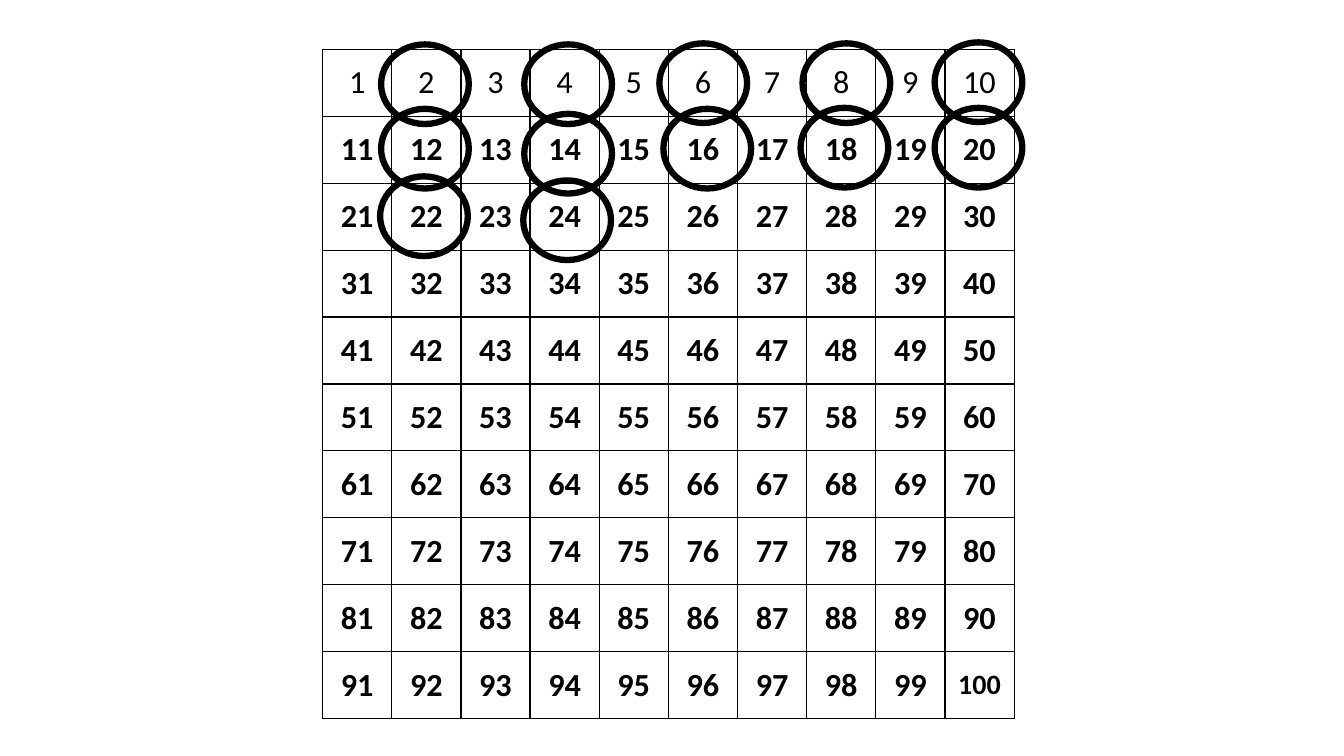
from dataclasses import dataclass

from lxml.etree import SubElement
from pptx import Presentation
from pptx.dml.color import RGBColor
from pptx.enum.shapes import MSO_SHAPE as Preset
from pptx.enum.text import MSO_ANCHOR as Anchor, PP_ALIGN as Align
from pptx.oxml.ns import qn
from pptx.slide import Slide
from pptx.table import _Cell as Cell
from pptx.util import Emu, Pt

EMU_PER_PX = 9144  # 100 px to the inch
BLACK = "000000"
COUNT = 10  # rows and columns of the hundred square
SQUARE_LEFT, SQUARE_TOP, SQUARE_WIDTH, SQUARE_HEIGHT = 320, 49, 686, 664
RING_WIDTH, RING_HEIGHT = 87, 79


@dataclass(frozen=True)
class Ring:
    """A ring around an even number, placed by hand."""
    number: int
    left: int
    top: int


RINGS = [
    Ring(4, 520, 44), Ring(2, 378, 44), Ring(12, 378, 108), Ring(8, 796, 43),
    Ring(20, 927, 107), Ring(16, 658, 108), Ring(6, 654, 43), Ring(18, 794, 107),
    Ring(14, 520, 113), Ring(10, 927, 42), Ring(22, 377, 175), Ring(24, 519, 179),
]


def px(length: int) -> Emu:
    return Emu(length * EMU_PER_PX)


def color(value: str) -> RGBColor:
    return RGBColor.from_string(value)


def add_borders(cell: Cell) -> None:
    properties = cell._tc.get_or_add_tcPr()
    for side in ("a:lnL", "a:lnR", "a:lnT", "a:lnB"):
        border = SubElement(properties, qn(side), w=str(Pt(1)))
        fill = SubElement(border, qn("a:solidFill"))
        SubElement(fill, qn("a:srgbClr"), val=BLACK)


def write_number(cell: Cell, number: int) -> None:
    add_borders(cell)
    cell.fill.background()
    cell.vertical_anchor = Anchor.MIDDLE
    cell.margin_left = cell.margin_right = px(13)
    cell.margin_top = cell.margin_bottom = px(6)
    cell.text_frame.text = str(number)
    paragraph = cell.text_frame.paragraphs[0]
    paragraph.alignment = Align.CENTER
    font = paragraph.runs[0].font
    font.name = "Calibri"
    font.size = Pt(20 if number == 100 else 23)
    font.bold = number > COUNT
    font.color.rgb = color(BLACK)


def add_hundred_square(slide: Slide) -> None:
    square = slide.shapes.add_table(
        COUNT, COUNT, px(SQUARE_LEFT), px(SQUARE_TOP),
        px(SQUARE_WIDTH), px(SQUARE_HEIGHT)).table
    square.first_row = square.horz_banding = False
    for column in square.columns:
        column.width = px(SQUARE_WIDTH) // COUNT
    for row in square.rows:
        row.height = px(SQUARE_HEIGHT) // COUNT
    for number, cell in enumerate(square.iter_cells(), start=1):
        write_number(cell, number)


def add_ring(slide: Slide, ring: Ring) -> None:
    ellipse = slide.shapes.add_shape(
        Preset.OVAL, px(ring.left), px(ring.top), px(RING_WIDTH), px(RING_HEIGHT))
    ellipse.shadow.inherit = False
    ellipse.fill.background()
    ellipse.line.color.rgb = color(BLACK)
    ellipse.line.width = Pt(4.5)


def main() -> None:
    deck = Presentation()
    deck.slide_width, deck.slide_height = px(1333), px(750)
    slide = deck.slides.add_slide(deck.slide_layouts[6])

    # Numbers from 1 to 100
    add_hundred_square(slide)

    # Rings around the first even numbers
    for ring in RINGS:
        add_ring(slide, ring)

    deck.save("out.pptx")


if __name__ == "__main__":
    main()
